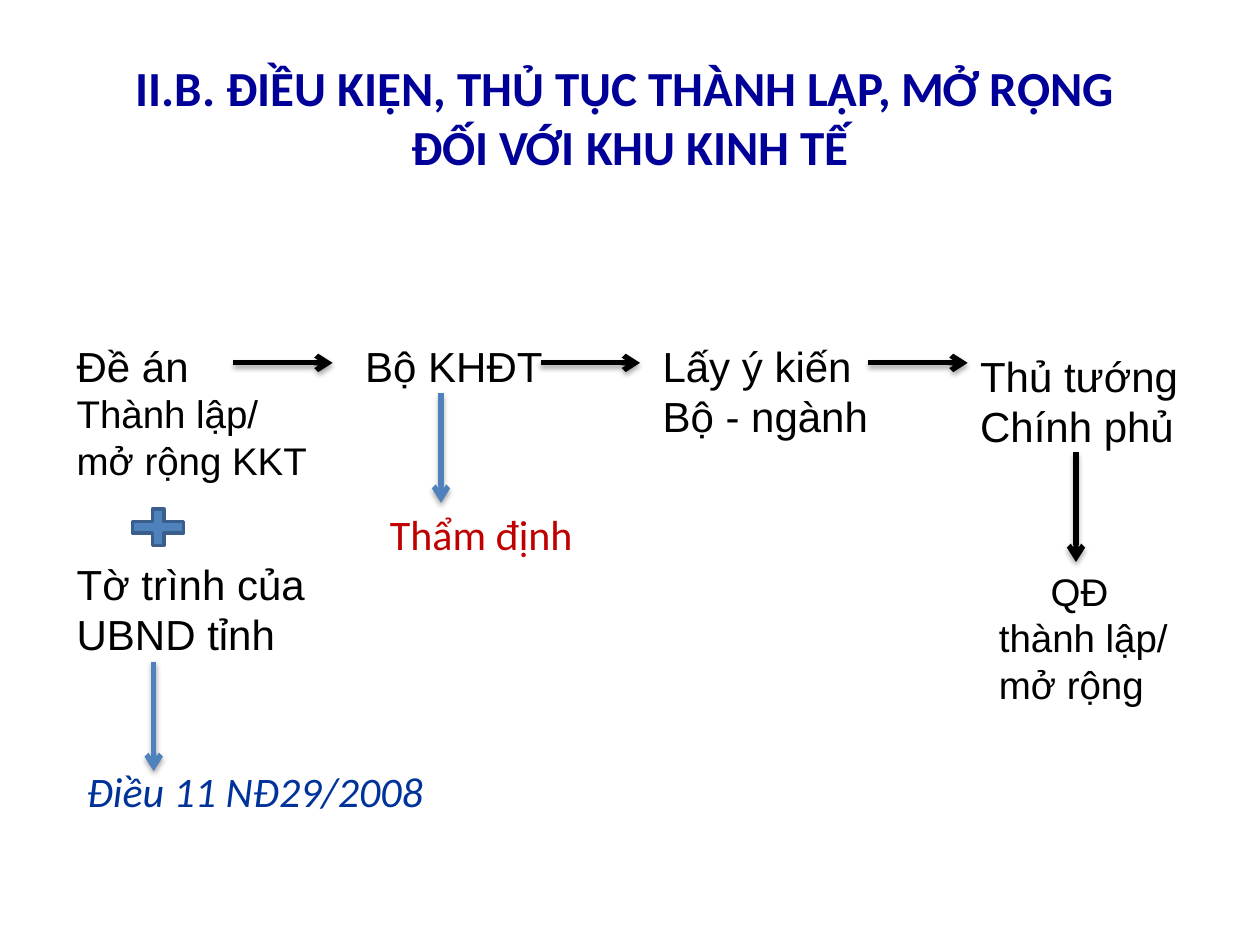
from dataclasses import dataclass

from lxml.etree import SubElement
from pptx import Presentation
from pptx.dml.color import RGBColor
from pptx.enum.shapes import MSO_CONNECTOR, MSO_SHAPE
from pptx.enum.text import MSO_ANCHOR, MSO_AUTO_SIZE, PP_ALIGN
from pptx.oxml.ns import qn
from pptx.util import Inches, Pt

BLACK, BLUE = "000000", "4F81BD"


@dataclass
class Line:
    text: str
    size: int = 24
    centred: bool = False


@dataclass
class Label:
    left: float
    top: float
    width: float
    height: float
    lines: list[Line]
    font: str = "Arial"
    color: str = BLACK
    italic: bool = False
    wrap: bool = False


@dataclass
class Arrow:
    left: float
    top: float
    across: float = 0
    down: float = 0
    color: str = BLACK


LABELS = [
    Label(0.51, 2.65, 2.05, 1.25,
          [Line("Đề án"), Line("Thành lập/", 22), Line("mở rộng KKT", 22)]),
    Label(0.51, 4.38, 2.12, 0.91, [Line("Tờ trình của"), Line("UBND tỉnh")]),
    Label(0.59, 6.03, 3.78, 0.91, [Line("Điều 11 NĐ29/2008")],
          "Calibri", "003399", italic=True, wrap=True),
    Label(2.8, 2.65, 1.71, 0.5, [Line("Bộ KHĐT")]),
    Label(2.72, 3.99, 2.2, 0.5, [Line("Thẩm định", centred=True)],
          "Calibri", "C00000", wrap=True),
    Label(5.16, 2.65, 1.85, 0.91, [Line("Lấy ý kiến"), Line("Bộ - ngành")]),
    Label(7.68, 2.73, 1.79, 0.91, [Line("Thủ tướng"), Line("Chính phủ")]),
    Label(7.83, 4.46, 1.56, 1.21,
          [Line("QĐ ", 22, True), Line("thành lập/", 22), Line("mở rộng", 22)]),
]

ARROWS = [
    *(Arrow(left, 2.88, across=0.79) for left in (1.85, 4.29, 6.89)),
    Arrow(1.22, 5.25, down=0.87, color=BLUE),
    Arrow(3.5, 3.12, down=0.87, color=BLUE),
    Arrow(8.54, 3.59, down=0.87),
]


def rgb(color: str) -> RGBColor:
    return RGBColor.from_string(color)


def add_run(paragraph, text: str, size: int, font: str, color: str,
            bold: bool = False, italic: bool = False) -> None:
    run = paragraph.add_run()
    run.text = text
    run.font.size = Pt(size)
    run.font.name = font
    run.font.color.rgb = rgb(color)
    run.font.bold = bold
    run.font.italic = italic


def add_title(slide, lines: list[str]) -> None:
    title = slide.shapes.title
    title.left, title.top = Inches(0.5), Inches(0.3)
    title.width, title.height = Inches(9), Inches(1.25)
    title.text_frame.vertical_anchor = MSO_ANCHOR.MIDDLE
    paragraph = title.text_frame.paragraphs[0]
    paragraph.alignment = PP_ALIGN.CENTER
    for index, text in enumerate(lines):
        if index:
            paragraph.add_line_break()
        add_run(paragraph, text, 28, "Calibri", "000099", bold=True)


def add_label(slide, label: Label) -> None:
    box = slide.shapes.add_textbox(Inches(label.left), Inches(label.top),
                                   Inches(label.width), Inches(label.height))
    frame = box.text_frame
    frame.word_wrap = label.wrap
    frame.auto_size = MSO_AUTO_SIZE.SHAPE_TO_FIT_TEXT
    for index, line in enumerate(label.lines):
        paragraph = frame.add_paragraph() if index else frame.paragraphs[0]
        paragraph.alignment = PP_ALIGN.CENTER if line.centred else PP_ALIGN.LEFT
        add_run(paragraph, line.text, line.size, label.font, label.color,
                italic=label.italic)


def add_arrow(slide, arrow: Arrow) -> None:
    connector = slide.shapes.add_connector(
        MSO_CONNECTOR.STRAIGHT, Inches(arrow.left), Inches(arrow.top),
        Inches(arrow.left + arrow.across), Inches(arrow.top + arrow.down))
    connector.line.color.rgb = rgb(arrow.color)
    connector.line.width = Pt(3)
    properties = connector._element.spPr
    SubElement(properties.find(qn("a:ln")), qn("a:tailEnd"), type="arrow")
    # Soft shadow straight below the line
    effects = SubElement(properties, qn("a:effectLst"))
    shadow = SubElement(effects, qn("a:outerShdw"), blurRad=str(Pt(3.1)),
                        dist=str(Pt(1.8)), dir="5400000", rotWithShape="0")
    shade = SubElement(shadow, qn("a:srgbClr"), val=BLACK)
    SubElement(shade, qn("a:alpha"), val="35000")


def add_plus(slide) -> None:
    plus = slide.shapes.add_shape(MSO_SHAPE.MATH_PLUS, Inches(0.98), Inches(3.99),
                                  Inches(0.55), Inches(0.39))
    plus.shadow.inherit = False
    plus.fill.solid()
    plus.fill.fore_color.rgb = rgb(BLUE)
    plus.line.color.rgb = rgb("3A5F8C")
    plus.line.width = Pt(2)


def main() -> None:
    presentation = Presentation()
    presentation.slide_width, presentation.slide_height = Inches(10), Inches(7.5)
    slide = presentation.slides.add_slide(presentation.slide_layouts[5])

    # Title
    add_title(slide, ["II.B. ĐIỀU KIỆN, THỦ TỤC THÀNH LẬP, MỞ RỘNG ",
                      "ĐỐI VỚI KHU KINH TẾ"])
    # Steps of the procedure
    for label in LABELS:
        add_label(slide, label)
    # Flow between the steps
    for arrow in ARROWS:
        add_arrow(slide, arrow)
    # Plus sign joining the two documents
    add_plus(slide)

    presentation.save("out.pptx")


if __name__ == "__main__":
    main()
